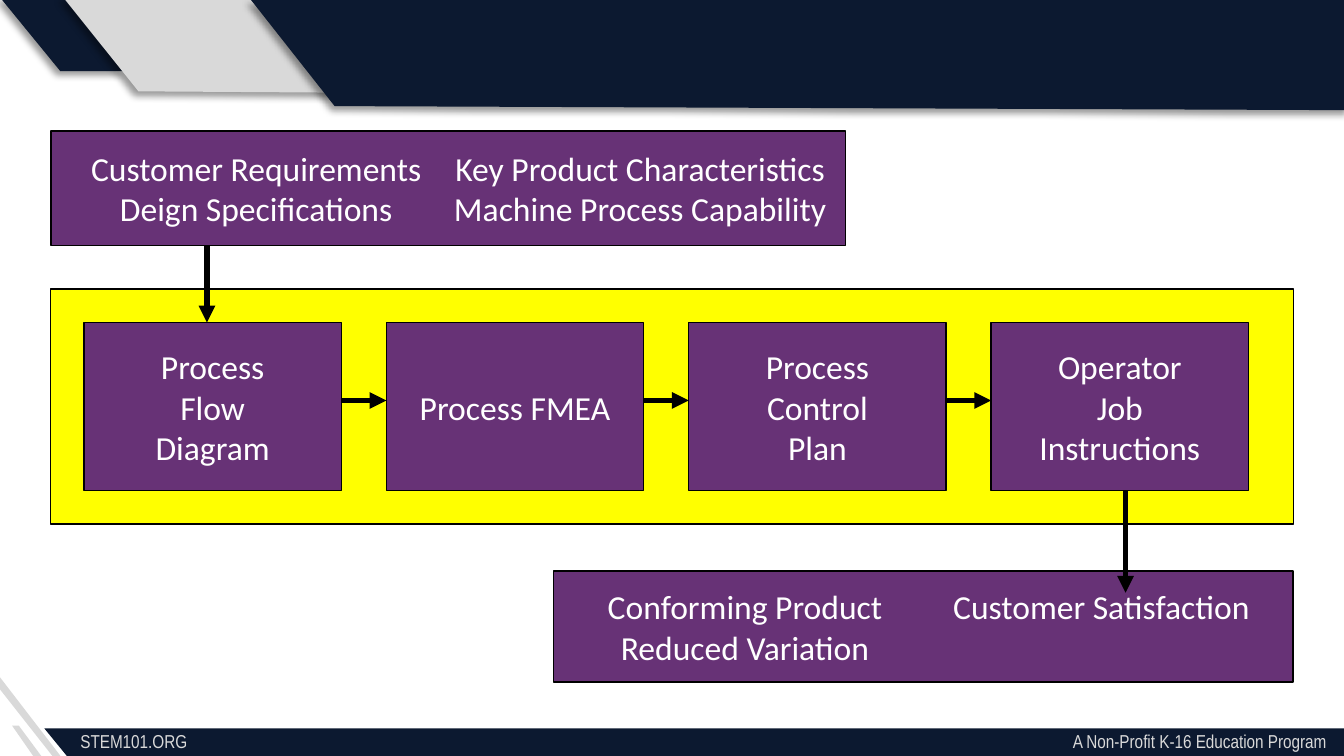
from dataclasses import dataclass

import lxml.etree
import pptx
import pptx.dml.color
import pptx.enum.shapes
import pptx.enum.text
import pptx.oxml.ns
import pptx.util

PX = 4572  # EMU per px: 200 px to the inch
qn = pptx.oxml.ns.qn


@dataclass(frozen=True)
class Theme:
    navy: str = "0C1930"
    grey: str = "D9D9D9"
    purple: str = "673276"
    yellow: str = "FFFF00"
    black: str = "000000"
    white: str = "FFFFFF"
    body_font: str = "Calibri"
    footer_font: str = "Arial Narrow"
    body_pt: float = 18
    footer_pt: float = 10
    outline_pt: float = 0.75
    arrow_pt: float = 3


@dataclass(frozen=True)
class Panel:
    points: tuple[tuple[int, int], ...]
    color: str
    shadow: bool = False


@dataclass(frozen=True)
class Box:
    left: int
    top: int
    width: int
    height: int
    lines: tuple[str, ...] = ()
    columns: int = 1


@dataclass(frozen=True)
class Arrow:
    x1: int
    y1: int
    x2: int
    y2: int


THEME = Theme()

# Slanted panels of the header and footer, back to front
PANELS = (
    Panel(((90, 106), (0, -4), (96, -4), (186, 106)), THEME.navy, True),
    Panel(((206, 136), (94, -4), (408, -4), (518, 138)), THEME.grey, True),
    Panel(((62, 1126), (50, 1126), (18, 1080), (28, 1080)), THEME.grey),
    Panel(((90, 1125), (78, 1125), (0, 1026), (0, 1008)), THEME.grey),
    Panel(((498, 158), (372, -2), (2004, -2), (2008, 164)), THEME.navy, True),
    Panel(((2012, 1130), (102, 1128), (66, 1084), (2014, 1084)), THEME.navy),
)

# Flow content
STEP_LEFT, STEP_TOP, STEP_PITCH = 125, 480, 450
STEP_WIDTH, STEP_HEIGHT = 383, 250
STEP_ARROW_Y = 596
STEP_LINES = (
    ("Process", "Flow", "Diagram"),
    ("Process FMEA",),
    ("Process", "Control", "Plan"),
    ("Operator", "Job", "Instructions"),
)
STEPS = tuple(
    Box(STEP_LEFT + i * STEP_PITCH, STEP_TOP, STEP_WIDTH, STEP_HEIGHT, lines)
    for i, lines in enumerate(STEP_LINES)
)
BAND = Box(75, 430, 1850, 350)
INPUTS = Box(76, 195, 1182, 170, (
    "Customer Requirements", "Deign Specifications",
    "Key Product Characteristics", "Machine Process Capability"), 2)
OUTPUTS = Box(824, 850, 1100, 165, (
    "Conforming Product", "Reduced Variation", "Customer Satisfaction"), 2)
ARROWS = (
    Arrow(308, 282, 308, STEP_TOP),
    Arrow(1675, STEP_TOP + STEP_HEIGHT, 1675, 882),
    *(Arrow(a.left + a.width, STEP_ARROW_Y, b.left, STEP_ARROW_Y)
      for a, b in zip(STEPS, STEPS[1:])),
)


def px(length: int) -> pptx.util.Emu:
    return pptx.util.Emu(length * PX)


def rgb(color: str) -> pptx.dml.color.RGBColor:
    return pptx.dml.color.RGBColor.from_string(color)


def add_run(paragraph, text: str, font: str, size: float, color: str) -> None:
    run = paragraph.add_run()
    run.text = text
    run.font.name = font
    run.font.size = pptx.util.Pt(size)
    run.font.color.rgb = rgb(color)


def add_shadow(shape) -> None:
    effects = shape._element.spPr.find(qn("a:effectLst"))
    outer = lxml.etree.SubElement(
        effects, qn("a:outerShdw"), blurRad=str(pptx.util.Pt(4)),
        dist=str(pptx.util.Pt(3)), dir=str(135 * 60000), rotWithShape="0")
    color = lxml.etree.SubElement(outer, qn("a:srgbClr"), val=THEME.black)
    lxml.etree.SubElement(color, qn("a:alpha"), val="40000")


def draw_panel(shapes, panel: Panel) -> None:
    start, *rest = panel.points
    builder = shapes.build_freeform(*start, scale=PX)
    builder.add_line_segments(rest, close=True)
    shape = builder.convert_to_shape()
    shape.fill.solid()
    shape.fill.fore_color.rgb = rgb(panel.color)
    shape.line.fill.background()
    shape.shadow.inherit = False
    if panel.shadow:
        add_shadow(shape)


def draw_box(shapes, box: Box, color: str) -> None:
    shape = shapes.add_shape(
        pptx.enum.shapes.MSO_SHAPE.RECTANGLE,
        px(box.left), px(box.top), px(box.width), px(box.height))
    shape.shadow.inherit = False
    shape.fill.solid()
    shape.fill.fore_color.rgb = rgb(color)
    shape.line.color.rgb = rgb(THEME.black)
    shape.line.width = pptx.util.Pt(THEME.outline_pt)
    frame = shape.text_frame
    frame.word_wrap = False
    frame.vertical_anchor = pptx.enum.text.MSO_ANCHOR.MIDDLE
    if box.columns > 1:
        frame._txBody.bodyPr.set("numCol", str(box.columns))
    for i, line in enumerate(box.lines):
        paragraph = frame.add_paragraph() if i else frame.paragraphs[0]
        paragraph.alignment = pptx.enum.text.PP_ALIGN.CENTER
        add_run(paragraph, line, THEME.body_font, THEME.body_pt, THEME.white)


def draw_arrow(shapes, arrow: Arrow) -> None:
    connector = shapes.add_connector(
        pptx.enum.shapes.MSO_CONNECTOR.STRAIGHT,
        px(arrow.x1), px(arrow.y1), px(arrow.x2), px(arrow.y2))
    connector.line.color.rgb = rgb(THEME.black)
    connector.line.width = pptx.util.Pt(THEME.arrow_pt)
    properties = connector._element.spPr
    lxml.etree.SubElement(
        properties.find(qn("a:ln")), qn("a:tailEnd"), type="triangle")
    lxml.etree.SubElement(properties, qn("a:effectLst"))


def draw_footer(shapes) -> None:
    footer = shapes.add_textbox(px(100), px(1076), px(1900), px(54))
    footer.text_frame.word_wrap = True
    paragraph = footer.text_frame.paragraphs[0]
    tabs = lxml.etree.SubElement(
        paragraph._p.get_or_add_pPr(), qn("a:tabLst"))
    lxml.etree.SubElement(tabs, qn("a:tab"), pos=str(px(1854)), algn="r")
    for text in ("STEM101.ORG", "\tA Non-Profit K-16 Education Program"):
        add_run(paragraph, text, THEME.footer_font, THEME.footer_pt, THEME.grey)


def main() -> None:
    deck = pptx.Presentation()
    deck.slide_width, deck.slide_height = px(2000), px(1125)
    shapes = deck.slides.add_slide(deck.slide_layouts[6]).shapes

    # Header and footer
    for panel in PANELS:
        draw_panel(shapes, panel)
    draw_footer(shapes)

    # Process flow; the inputs box covers the start of its arrow
    draw_box(shapes, BAND, THEME.yellow)
    for box in (*STEPS, OUTPUTS):
        draw_box(shapes, box, THEME.purple)
    for arrow in ARROWS:
        draw_arrow(shapes, arrow)
    draw_box(shapes, INPUTS, THEME.purple)

    deck.save("out.pptx")


if __name__ == "__main__":
    main()
